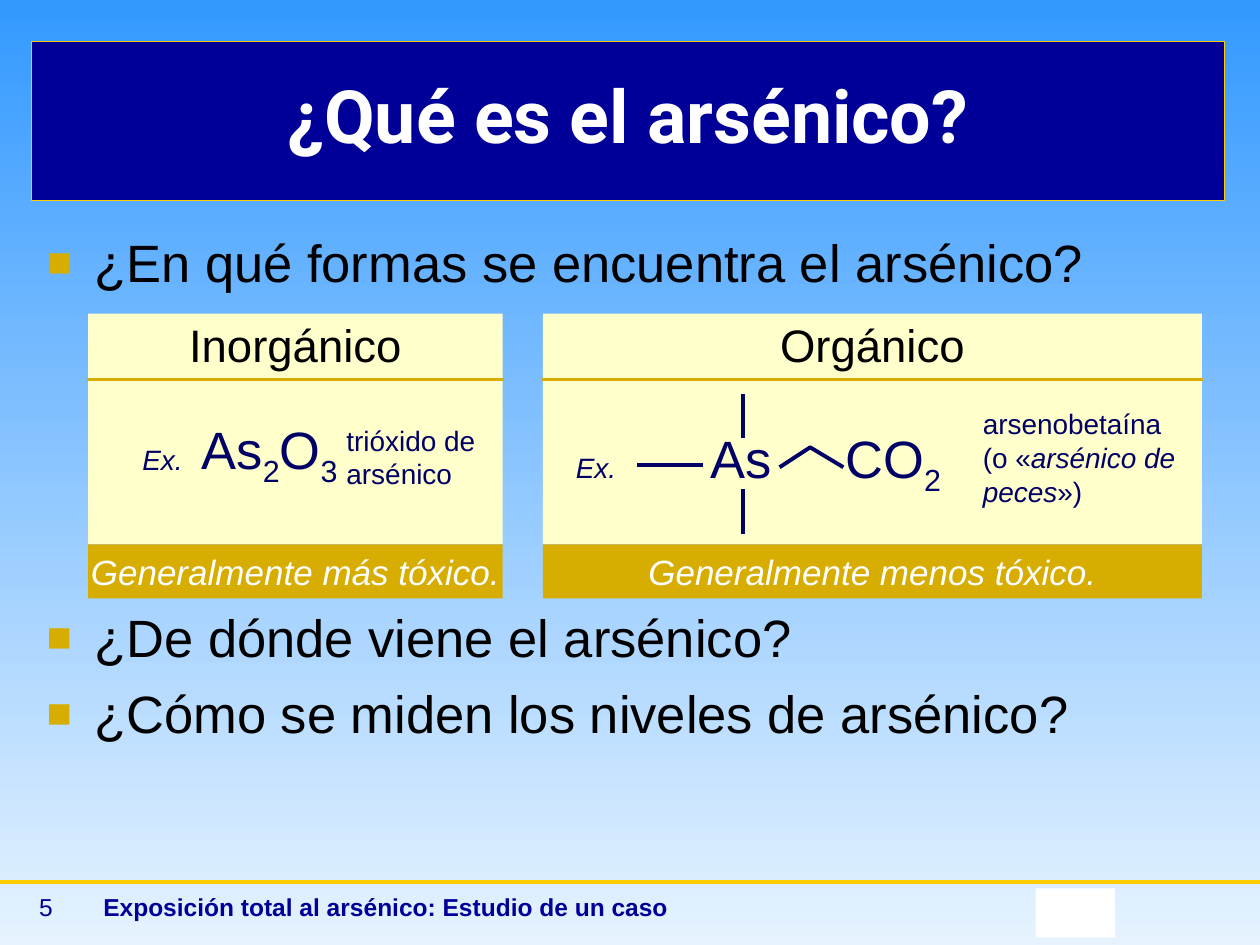
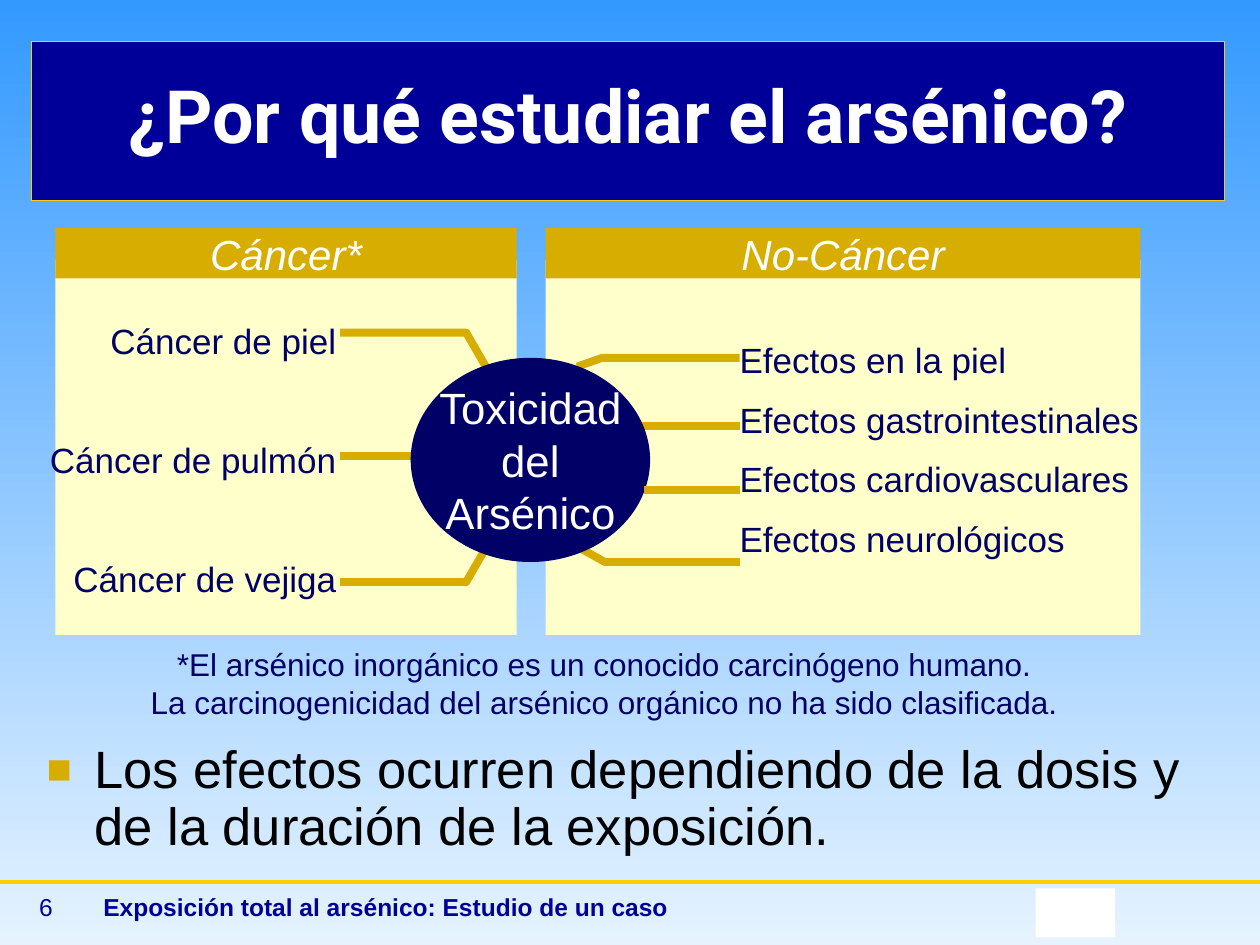
from lxml import etree
from pptx import Presentation
from pptx import util as u
from pptx.dml.color import RGBColor
from pptx.enum import shapes, text
from pptx.oxml.ns import qn

HUE = {"sky": "3399FF", "pale": "E6F3FF", "navy": "000099", "ink": "000066",
       "gold": "D6AD00", "rule": "FFCC00", "cream": "FFFFCC",
       "white": "FFFFFF", "black": "000000"}
RGB = {name: RGBColor.from_string(code) for name, code in HUE.items()}
MID, TOP = text.MSO_ANCHOR.MIDDLE, text.MSO_ANCHOR.TOP
LEFT, CENTER, RIGHT = text.PP_ALIGN.LEFT, text.PP_ALIGN.CENTER, text.PP_ALIGN.RIGHT
RECT, OVAL = shapes.MSO_SHAPE.RECTANGLE, shapes.MSO_SHAPE.OVAL


def put(slide, area, paras=(), size=16, hue="ink", align=LEFT, anchor=MID,
        fill=None, kind=RECT, bold=False, wrap=True, gap=0, bullet=False):
    area = [u.Inches(n) for n in area]
    if fill:
        box = slide.shapes.add_shape(kind, *area)
        box.shadow.inherit = False
        box.fill.solid()
        box.fill.fore_color.rgb = RGB[fill]
        box.line.fill.background()
    else:
        box = slide.shapes.add_textbox(*area)
    frame = box.text_frame
    frame.word_wrap = wrap
    frame.vertical_anchor = anchor
    frame.margin_left = frame.margin_right = frame.margin_top = frame.margin_bottom = 0
    for i, runs in enumerate(paras):
        para = frame.paragraphs[0] if i == 0 else frame.add_paragraph()
        para.alignment = align
        if bullet:
            props = para._p.get_or_add_pPr()
            props.set("marL", str(u.Inches(0.38)))
            props.set("indent", str(u.Inches(-0.38)))
            tint = etree.SubElement(props, qn("a:buClr"))
            etree.SubElement(tint, qn("a:srgbClr"), val=HUE["gold"])
            etree.SubElement(props, qn("a:buSzPct"), val="80000")
            etree.SubElement(props, qn("a:buFont"), typeface="Arial")
            etree.SubElement(props, qn("a:buChar"), char="■")
            para.line_spacing = 0.9
        if i and gap:
            para.space_before = u.Pt(gap)
        for words, style in runs:
            run = para.add_run()
            run.text = words
            run.font.name = "Arial"
            run.font.size = u.Pt(size)
            run.font.color.rgb = RGB[hue]
            run.font.bold = bold
            run.font.italic = style == "italic"
            if style == "sub":
                run._r.get_or_add_rPr().set("baseline", "-25000")
    return box


def draw(slide, points, hue, width):
    points = [(u.Inches(x), u.Inches(y)) for x, y in points]
    if len(points) == 2:
        path = slide.shapes.add_connector(shapes.MSO_CONNECTOR.STRAIGHT, *points[0], *points[1])
        etree.SubElement(path._element.spPr, qn("a:effectLst"))
    else:
        form = slide.shapes.build_freeform(*points[0])
        form.add_line_segments(points[1:], close=False)
        path = form.convert_to_shape()
        path.shadow.inherit = False
        path.fill.background()
    path.line.color.rgb = RGB[hue]
    path.line.width = u.Pt(width)
    path._element.spPr.find(qn("a:ln")).set("cap", "sq")


deck = Presentation()
deck.slide_width, deck.slide_height = u.Inches(10), u.Inches(7.5)
back = deck.slide_master.background.fill
back.gradient()
back.gradient_angle = 270
for stop, name in zip(back.gradient_stops, ("sky", "pale")):
    stop.color.rgb = RGB[name]

pages = []
for number, heading in ((5, "¿Qué es el arsénico?"), (6, "¿Por qué estudiar el arsénico?")):
    page = deck.slides.add_slide(deck.slide_layouts[5])
    pages.append(page)
    title = page.shapes.title
    title.left, title.top = u.Inches(0.25), u.Inches(0.33)
    title.width, title.height = u.Inches(9.47), u.Inches(1.26)
    title.fill.solid()
    title.fill.fore_color.rgb = RGB["navy"]
    title.line.color.rgb = RGB["rule"]
    title.line.width = u.Pt(0.75)
    title.text_frame.auto_size = text.MSO_AUTO_SIZE.NONE
    title.text_frame.vertical_anchor = MID
    para = title.text_frame.paragraphs[0]
    para.alignment = CENTER
    para.line_spacing = 0.85
    run = para.add_run()
    run.text = heading
    run.font.name = "Roboto"
    run.font.size = u.Pt(42)
    run.font.bold = True
    run.font.color.rgb = RGB["white"]
    draw(page, [(0, 7), (10, 7)], "rule", 2.25)
    put(page, (8.22, 7.05, 0.63, 0.39), fill="white")
    put(page, (0.31, 7.08, 0.51, 0.23), [[(str(number), "")]], 14, "navy", anchor=TOP)
    put(page, (0.82, 7.08, 4.69, 0.23),
        [[("Exposición total al arsénico: Estudio de un caso", "")]],
        14, "navy", anchor=TOP, bold=True)

forms, risks = pages

for top, lines in (
    (1.88, ["¿En qué formas se encuentra el arsénico?"]),
    (4.86, ["¿De dónde viene el arsénico?", "¿Cómo se miden los niveles de arsénico?"]),
):
    put(forms, (0.37, top, 9.36, 0.6 * len(lines)), [[(line, "")] for line in lines],
        30, "black", anchor=TOP, gap=11, bullet=True)

for left, wide, name, note in (
    (0.7, 3.29, "Inorgánico", "Generalmente más tóxico."),
    (4.31, 5.23, "Orgánico", "Generalmente menos tóxico."),
):
    put(forms, (left, 2.49, wide, 1.83), fill="cream")
    put(forms, (left, 2.52, wide, 0.43), [[(name, "")]], 26, "black", CENTER)
    put(forms, (left, 4.32, wide, 0.43), [[(note, "italic")]], 20, "white", CENTER,
        fill="gold", wrap=False)
    draw(forms, [(left, 3.01), (left + wide, 3.01)], "gold", 1.5)

for left, top in ((1.13, 3.51), (4.57, 3.58)):
    put(forms, (left, top, 0.4, 0.26), [[("Ex.", "italic")]], anchor=TOP)
for left, top, wide, runs in (
    (1.6, 3.31, 1.15, [("As", ""), ("2", "sub"), ("O", ""), ("3", "sub")]),
    (5.64, 3.38, 0.56, [("As", "")]),
    (6.71, 3.38, 0.95, [("CO", ""), ("2", "sub")]),
):
    put(forms, (left, top, wide, 0.5), [runs], 30, anchor=TOP)
put(forms, (2.75, 3.36, 1.13, 0.53), [[("trióxido de arsénico", "")]])
put(forms, (7.8, 3.23, 1.62, 0.8),
    [[("arsenobetaína", "")], [("(o «", ""), ("arsénico de peces", "italic"), ("»)", "")]])
for bond in (
    [(5.07, 3.69), (5.56, 3.69)],
    [(6.2, 3.7), (6.43, 3.55), (6.68, 3.7)],
    [(5.9, 3.14), (5.9, 3.46)],
    [(5.9, 3.9), (5.9, 4.22)],
):
    draw(forms, bond, "ink", 2.25)

for left, wide, name in ((0.44, 3.66, "Cáncer*"), (4.33, 4.72, "No-Cáncer")):
    put(risks, (left, 2.06, wide, 2.98), fill="cream")
    put(risks, (left, 1.81, wide, 0.4), [[(name, "italic")]], 24, "white", CENTER, fill="gold")

for link in (
    [(2.73, 2.64), (3.7, 2.64), (3.85, 2.9)],
    [(2.73, 3.62), (3.28, 3.62)],
    [(2.73, 4.62), (3.7, 4.62), (3.85, 4.36)],
    [(5.84, 2.84), (4.78, 2.84), (4.61, 2.9)],
    [(5.84, 3.38), (5.1, 3.38)],
    [(5.84, 4.46), (4.8, 4.46), (4.64, 4.37)],
):
    draw(risks, link, "gold", 4.5)
put(risks, (3.26, 2.84, 1.9, 1.62), [[(word, "")] for word in ("Toxicidad", "del", "Arsénico")],
    25, "white", CENTER, fill="ink", kind=OVAL, wrap=False)
draw(risks, [(5.84, 3.89), (5.14, 3.89)], "gold", 4.5)

for area, align, gap, lines in (
    ((0.3, 2.48, 2.37, 2.33), RIGHT, 44,
     ["Cáncer de piel", "Cáncer de pulmón", "Cáncer de vejiga"]),
    ((5.87, 2.65, 3.33, 1.83), LEFT, 10,
     ["Efectos en la piel", "Efectos gastrointestinales",
      "Efectos cardiovasculares", "Efectos neurológicos"]),
):
    put(risks, area, [[(line, "")] for line in lines], 20, align=align, gap=gap)

put(risks, (0.53, 5.12, 8.53, 0.6),
    [[("*El arsénico inorgánico es un conocido carcinógeno humano.", "")],
     [("La carcinogenicidad del arsénico orgánico no ha sido clasificada.", "")]],
    18, align=CENTER)
put(risks, (0.37, 5.9, 9.36, 0.97),
    [[("Los efectos ocurren dependiendo de la dosis y de la duración de la exposición.", "")]],
    30, "black", anchor=TOP, bullet=True)

deck.save("out.pptx")
